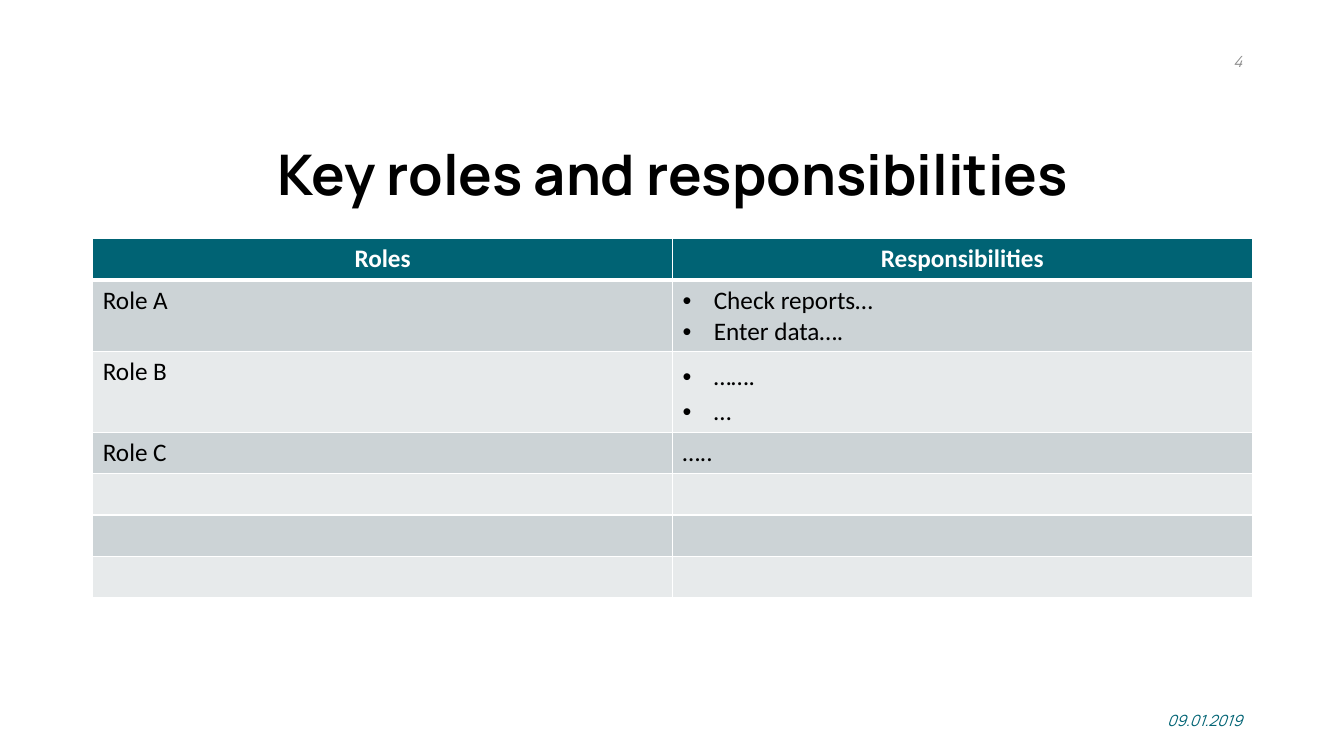
from lxml.etree import SubElement
from pptx import Presentation
from pptx.dml.color import RGBColor
from pptx.enum.text import MSO_ANCHOR as Anchor, PP_ALIGN as Align
from pptx.oxml.ns import qn
from pptx.util import Inches, Pt

TEAL, WHITE, BLACK, GRAY = "006374", "FFFFFF", "000000", "8C8C8C"
BANDS = ("CCD3D6", "E7EAEB")
LEFT, WIDTH = 0.92, 11.5

HEADER = ["Roles", "Responsibilities"]
# Role, responsibilities, bulleted, line spacing, row height
ROLES = [
    ("Role A", ["Check reports…", "Enter data…."], True, 1.0, 0.71),
    ("Role B", ["…….", "…"], True, 1.15, 0.8),
    ("Role C", ["….."], False, 1.0, 0.41),
] + [("", [""], False, 1.0, 0.41)] * 3


def color(value):
    return RGBColor.from_string(value)


class SlideBuilder:
    heading_font = "Manrope"
    table_font = "Calibri"
    header_height = 0.41

    def __init__(self, slide):
        self.slide = slide

    def fill_paragraph(self, paragraph, text, ink, align=Align.LEFT, spacing=1.0, **font):
        paragraph.alignment = align
        paragraph.line_spacing = spacing
        if not text:
            return
        run = paragraph.add_run()
        run.text = text
        for name, value in font.items():
            setattr(run.font, name, value)
        run.font.color.rgb = color(ink)

    def text(self, box, text, ink, **style):
        shape = self.slide.shapes.add_textbox(*map(Inches, box))
        frame = shape.text_frame
        frame.word_wrap = True
        frame.vertical_anchor = Anchor.MIDDLE
        self.fill_paragraph(frame.paragraphs[0], text, ink, name=self.heading_font, **style)

    def bullet(self, paragraph):
        properties = paragraph._p.get_or_add_pPr()
        indent = Inches(0.31)
        properties.set("marL", str(indent))
        properties.set("indent", str(-indent))
        SubElement(properties, qn("a:buFont")).set("typeface", "Arial")
        SubElement(properties, qn("a:buChar")).set("char", "•")

    def borders(self, cell, bottom):
        """Draw white cell borders; call before the fill, which must follow them."""
        properties = cell._tc.get_or_add_tcPr()
        for side, width in {"L": 1, "R": 1, "T": 1, "B": bottom}.items():
            line = SubElement(properties, qn(f"a:ln{side}"), w=str(Pt(width)))
            fill = SubElement(line, qn("a:solidFill"))
            SubElement(fill, qn("a:srgbClr"), val=WHITE)

    def cell(self, cell, lines, fill, ink=BLACK, bulleted=False, bottom=1, **style):
        self.borders(cell, bottom)
        cell.fill.solid()
        cell.fill.fore_color.rgb = color(fill)
        frame = cell.text_frame
        for index, line in enumerate(lines):
            paragraph = frame.add_paragraph() if index else frame.paragraphs[0]
            self.fill_paragraph(paragraph, line, ink, name=self.table_font,
                                size=Pt(18), **style)
            if bulleted:
                self.bullet(paragraph)

    def table(self, left, top, width, header, rows):
        heights = [self.header_height] + [row[-1] for row in rows]
        box = map(Inches, (left, top, width, sum(heights)))
        table = self.slide.shapes.add_table(len(heights), len(header), *box).table
        for column in table.columns:
            column.width = Inches(width / len(header))
        for row, height in zip(table.rows, heights):
            row.height = Inches(height)
        for index, label in enumerate(header):
            self.cell(table.cell(0, index), [label], TEAL, WHITE, bottom=3,
                      align=Align.CENTER, bold=True)
        for index, (role, duties, bulleted, spacing, _) in enumerate(rows):
            band = BANDS[index % 2]
            self.cell(table.cell(index + 1, 0), [role], band, bold=False)
            self.cell(table.cell(index + 1, 1), duties, band, bulleted=bulleted,
                      spacing=spacing, bold=False)


def main():
    presentation = Presentation()
    presentation.slide_width = Inches(13.33)
    presentation.slide_height = Inches(7.5)
    builder = SlideBuilder(presentation.slides.add_slide(presentation.slide_layouts[6]))

    builder.text((LEFT, 1.24, WIDTH, 1.03), "Key roles and responsibilities", BLACK,
                 align=Align.CENTER, spacing=0.9, size=Pt(40), bold=True)
    builder.table(LEFT, 2.37, WIDTH, HEADER, ROLES)
    for top, label, ink in ((6.95, "09.01.2019", TEAL), (0.41, "4", GRAY)):
        builder.text((9.42, top, 3, 0.4), label, ink,
                     align=Align.RIGHT, size=Pt(11), italic=True)

    presentation.save("out.pptx")


if __name__ == "__main__":
    main()
